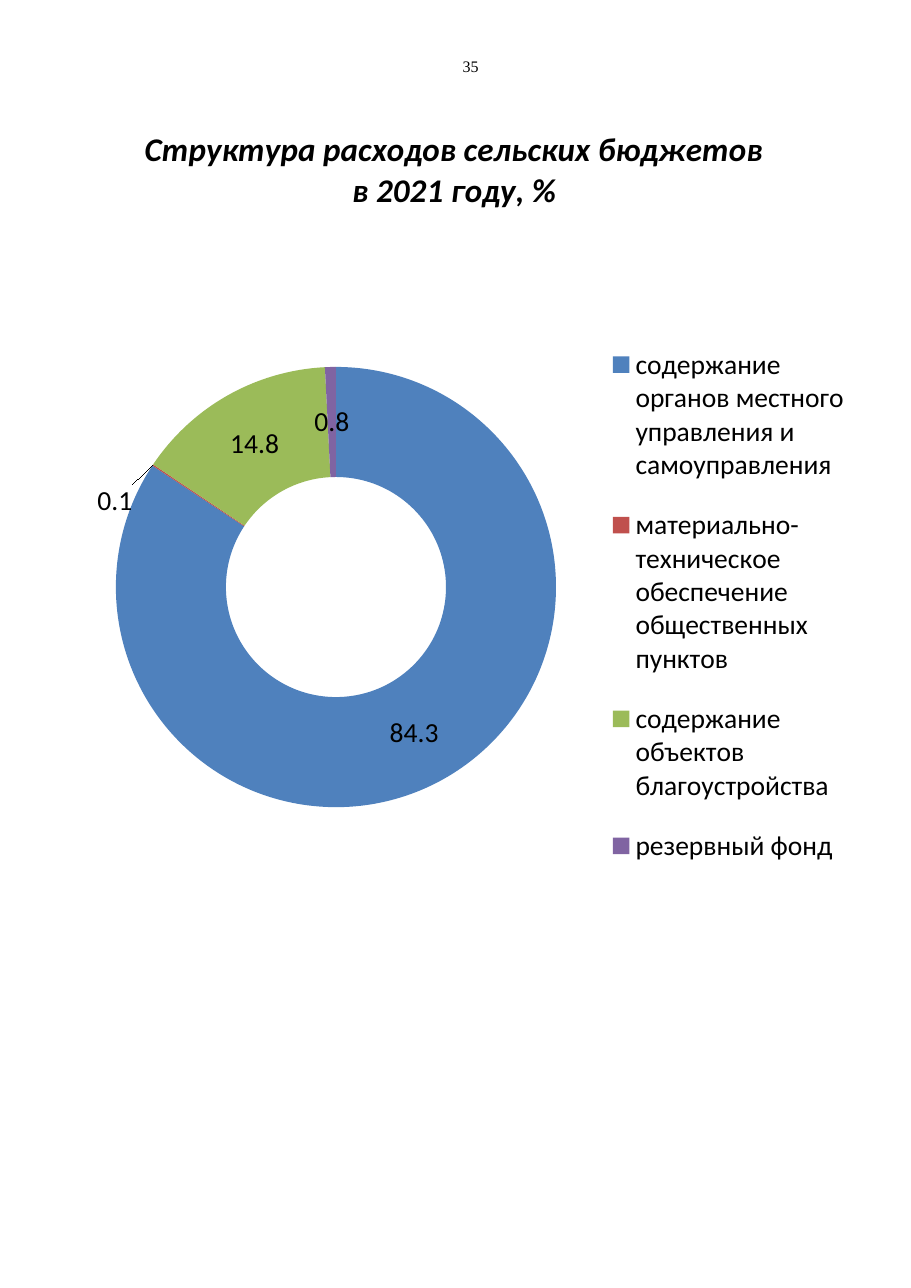
from lxml import etree
from pptx import Presentation
from pptx.chart.data import CategoryChartData
from pptx.dml.color import RGBColor
from pptx.enum.chart import XL_CHART_TYPE, XL_LEGEND_POSITION
from pptx.oxml.ns import qn
from pptx.util import Inches, Pt

DOUGHNUT = XL_CHART_TYPE.DOUGHNUT
LEGEND_RIGHT = XL_LEGEND_POSITION.RIGHT

COLORS = {
    "text": "000000",
    "administration": "4F81BD",
    "equipment": "C0504D",
    "improvement": "9BBB59",
    "reserve": "8064A2",
}
EXPENSES = [
    ("содержание органов местного управления и самоуправления", 84.3, "administration"),
    ("материально-техническое обеспечение общественных пунктов", 0.1, "equipment"),
    ("содержание объектов благоустройства", 14.8, "improvement"),
    ("резервный фонд", 0.8, "reserve"),
]
TITLE_LINES = ["Структура расходов сельских бюджетов", "в 2021 году, %"]
MOVED_LABEL = 1


def color(name):
    return RGBColor.from_string(COLORS[name])


def style_font(font, size, name="Calibri"):
    font.name = name
    font.size = Pt(size)
    font.color.rgb = color("text")


def set_layout(parent, previous_tag, **settings):
    """Place a chart part by hand; lengths are fractions of the chart."""
    for old_layout in parent.findall(qn("c:layout")):
        parent.remove(old_layout)
    layout = etree.Element(qn("c:layout"))
    manual = etree.SubElement(layout, qn("c:manualLayout"))
    for tag, value in settings.items():
        etree.SubElement(manual, qn(f"c:{tag}")).set("val", str(value))
    if previous_tag:
        parent.find(qn(previous_tag)).addnext(layout)
    else:
        parent.insert(0, layout)


def add_page_number(slide, left, top, width, height):
    box = slide.shapes.add_textbox(Inches(left), Inches(top), Inches(width), Inches(height))
    frame = box.text_frame
    frame.margin_left = frame.margin_right = frame.margin_top = frame.margin_bottom = 0
    frame.text = "35"
    style_font(frame.paragraphs[0].runs[0].font, 10.5, "Times New Roman")


def set_title(chart):
    chart.has_title = True
    title = chart.chart_title
    title.text_frame.text = "\n".join(TITLE_LINES)
    for paragraph in title.text_frame.paragraphs:
        font = paragraph.runs[0].font
        style_font(font, 21.6)
        font.bold = font.italic = True
    set_layout(title._element, "c:tx", xMode="edge", yMode="edge", x=0.1, y=0)


def set_legend(chart):
    chart.has_legend = True
    legend = chart.legend
    legend.position = LEGEND_RIGHT
    legend.include_in_layout = False
    style_font(legend.font, 18)
    set_layout(legend._element, "c:legendPos", xMode="edge", yMode="edge",
               x=0.69, y=0.25, w=0.3, h=0.72)


def set_labels(series):
    labels = series.data_labels
    labels.show_value = True
    style_font(labels.font, 18)
    style_font(series.points[MOVED_LABEL].data_label.font, 18)
    moved = series._element.find(f".//{qn('c:dLbl')}")
    set_layout(moved, "c:idx", x=-0.105, y=0.007)


def add_expense_chart(slide, left, top, width, height):
    data = CategoryChartData()
    data.categories = [name for name, _, _ in EXPENSES]
    data.add_series("Series 1", [value for _, value, _ in EXPENSES])
    chart = slide.shapes.add_chart(
        DOUGHNUT, Inches(left), Inches(top), Inches(width), Inches(height), data).chart
    style_font(chart.font, 18)
    set_title(chart)
    set_legend(chart)

    plot = chart.plots[0]
    plot.vary_by_categories = True
    series = plot.series[0]
    for index, (_, _, color_name) in enumerate(EXPENSES):
        fill = series.points[index].format.fill
        fill.solid()
        fill.fore_color.rgb = color(color_name)
    set_labels(series)

    ring = 4.0
    set_layout(plot._element.getparent(), None, layoutTarget="inner",
               xMode="edge", yMode="edge", x=0.068, y=0.308,
               w=round(ring / width, 3), h=round(ring / height, 3))


def main():
    presentation = Presentation()
    presentation.slide_width = Inches(8.27)
    presentation.slide_height = Inches(11.69)
    slide = presentation.slides.add_slide(presentation.slide_layouts[6])
    add_page_number(slide, 4.2, 0.51, 0.19, 0.15)
    add_expense_chart(slide, 0.56, 1.12, 7.24, 7.17)
    presentation.save("out.pptx")


if __name__ == "__main__":
    main()
